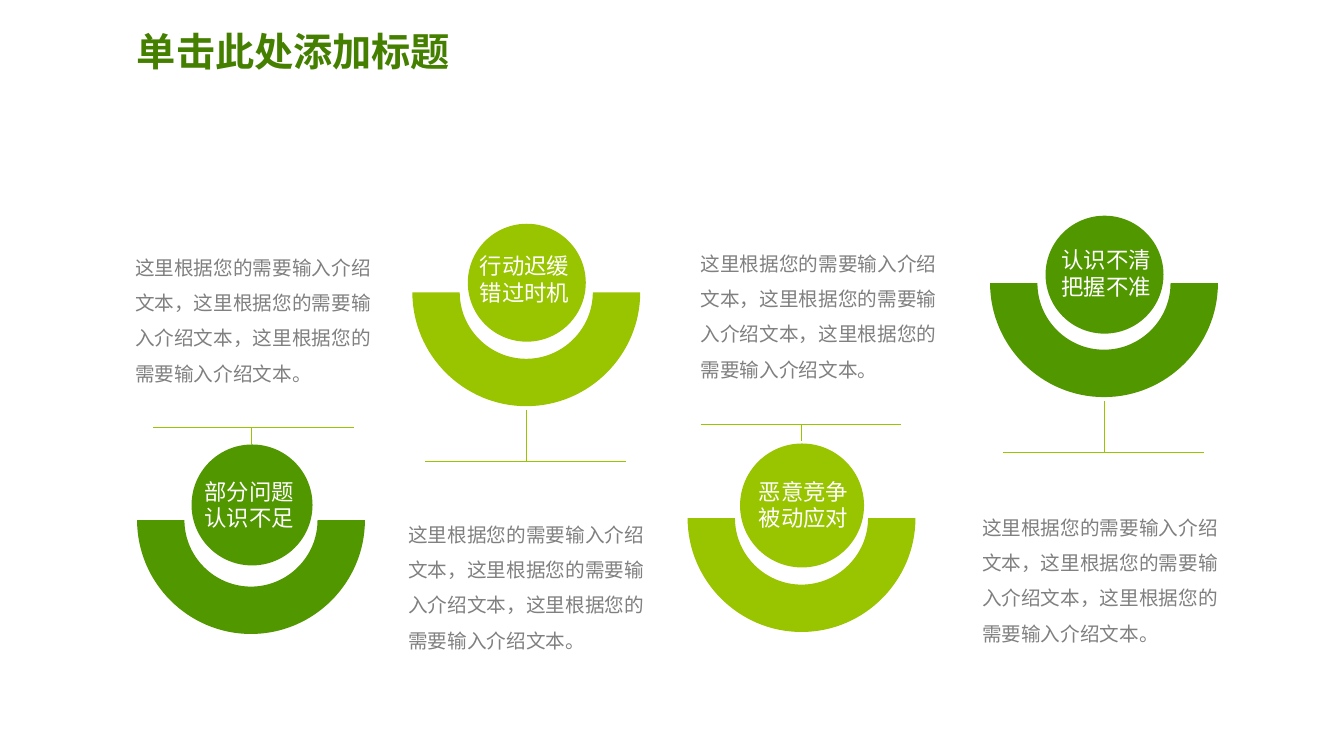
from dataclasses import dataclass

import lxml.etree
import pptx
import pptx.dml.color
import pptx.enum.shapes
import pptx.enum.text
import pptx.oxml.ns
import pptx.util
from pptx.util import Inches

COLORS = {
    "background": "FFFFFF",
    "dark": "519700",
    "light": "99C400",
    "title": "447F00",
    "body": "808080",
    "label": "FFFFFF",
}
BODY = "这里根据您的需要输入介绍文本，" * 2 + "这里根据您的需要输入介绍文本。"
SLIDE_WIDTH, SLIDE_HEIGHT = 13.33, 7.5
OUTER_RADIUS = 1.13
INNER_RADIUS = 0.66
ARC_HANDLE = 0.55  # curve handle of a quarter circle, as a share of its radius
BAR_WIDTH = 1.99


@dataclass
class Topic:
    lines: tuple
    color: str
    center: float
    ring_top: float
    circle: tuple  # left, top, diameter
    bar: tuple  # left, top
    stem_end: float
    label: tuple  # left, top
    body: tuple  # left, top
    centered: bool = False


TOPICS = [
    Topic(("部分问题", "认识不足"), "dark", 2.49, 5.16, (1.9, 4.41, 1.2),
          (1.52, 4.24), 4.4, (1.93, 4.69), (1.21, 2.35)),
    Topic(("行动迟缓", "错过时机"), "light", 5.22, 2.9, (4.64, 2.22, 1.17),
          (4.22, 4.58), 4.07, (4.66, 2.45), (3.92, 5)),
    Topic(("恶意竞争", "被动应对"), "light", 7.95, 5.14, (7.34, 4.4, 1.23),
          (6.95, 4.21), 4.38, (7.42, 4.69), (6.82, 2.31), centered=True),
    Topic(("认识不清", "把握不准"), "dark", 10.95, 2.81, (10.37, 2.14, 1.17),
          (9.95, 4.49), 3.98, (10.43, 2.39), (9.61, 4.93)),
]


def rgb(name):
    return pptx.dml.color.RGBColor.from_string(COLORS[name])


def paint(shape, color):
    shape.shadow.inherit = False
    shape.fill.solid()
    shape.fill.fore_color.rgb = rgb(color)
    shape.line.fill.background()


def add_preset(shapes, preset, place, color):
    paint(shapes.add_shape(preset, *map(Inches, place)), color)


def half_circle(radius):
    """Give curve points from the left end through the bottom to the right."""
    handle = radius * ARC_HANDLE
    return [(-radius, 0), (-radius, handle), (-handle, radius), (0, radius),
            (handle, radius), (radius, handle), (radius, 0)]


def bend(outline, first):
    """Turn three line segments of the outline, from first on, into a curve."""
    segments = list(outline)[first:first + 3]
    curve = lxml.etree.Element(pptx.oxml.ns.qn("a:cubicBezTo"))
    segments[0].addprevious(curve)
    for segment in segments:
        curve.append(segment[0])
        outline.remove(segment)


def add_half_ring(shapes, center, top, color):
    """Draw the lower half of a ring whose flat edge lies at top."""
    offsets = ([(-OUTER_RADIUS, 0)] + half_circle(INNER_RADIUS)
               + half_circle(OUTER_RADIUS)[::-1])
    points = [(Inches(center + x), Inches(top + y)) for x, y in offsets]
    builder = shapes.build_freeform(*points[0])
    builder.add_line_segments(points[1:], close=True)
    ring = builder.convert_to_shape()
    outline = next(ring._element.iter(pptx.oxml.ns.qn("a:path")))
    for first in (12, 9, 5, 2):
        bend(outline, first)
    paint(ring, color)


def add_line(shapes, start, end):
    line = shapes.add_connector(
        pptx.enum.shapes.MSO_CONNECTOR.STRAIGHT,
        *map(Inches, start + end))
    line.line.color.rgb = rgb("light")
    line.line.width = pptx.util.Pt(0.5)
    lxml.etree.SubElement(line._element.spPr,
                          pptx.oxml.ns.qn("a:effectLst"))


def add_text(shapes, place, lines, size, color, font="Arial", bold=None,
             spacing=None, align=None, wrap=True):
    frame = shapes.add_textbox(*map(Inches, place)).text_frame
    frame.word_wrap = wrap
    frame.text = "\n".join(lines)
    for para in frame.paragraphs:
        para.font.name = font
        para.font.size = pptx.util.Pt(size)
        para.font.bold = bold
        para.font.color.rgb = rgb(color)
        para.line_spacing = spacing
        para.alignment = align
    return frame


def add_title(shapes, text):
    frame = add_text(shapes, (1.26, 0.11, 11.5, 0.85), [text], 28, "title",
                     font="Montserrat", bold=True, spacing=0.9)
    frame.vertical_anchor = pptx.enum.text.MSO_ANCHOR.MIDDLE


def add_body(shapes, left, top):
    frame = add_text(shapes, (left, top, 2.68, 1.55), [BODY], 14, "body",
                     spacing=1.5)
    frame.margin_left = frame.margin_right = Inches(0.13)
    frame.margin_top = frame.margin_bottom = Inches(0.07)
    frame.auto_size = pptx.enum.text.MSO_AUTO_SIZE.SHAPE_TO_FIT_TEXT


def add_label(shapes, topic):
    align = pptx.enum.text.PP_ALIGN.CENTER if topic.centered else None
    frame = add_text(shapes, topic.label + (1.1, 0.64), topic.lines, 16,
                     "label", align=align, wrap=False)
    frame.auto_size = pptx.enum.text.MSO_AUTO_SIZE.SHAPE_TO_FIT_TEXT


def add_topic(page, topic):
    shapes = page.shapes.add_group_shape().shapes
    add_half_ring(shapes, topic.center, topic.ring_top, topic.color)
    left, top, diameter = topic.circle
    add_preset(shapes, pptx.enum.shapes.MSO_SHAPE.OVAL,
               (left, top, diameter, diameter), topic.color)
    left, top = topic.bar
    add_line(shapes, (left, top), (left + BAR_WIDTH, top))
    add_line(shapes, (topic.center, top), (topic.center, topic.stem_end))
    add_label(shapes, topic)


def main():
    deck = pptx.Presentation()
    deck.slide_width = Inches(SLIDE_WIDTH)
    deck.slide_height = Inches(SLIDE_HEIGHT)
    page = deck.slides.add_slide(deck.slide_layouts[6])
    add_preset(page.shapes, pptx.enum.shapes.MSO_SHAPE.RECTANGLE,
               (0, 0, SLIDE_WIDTH, SLIDE_HEIGHT), "background")
    for topic in TOPICS:
        add_topic(page, topic)
    for topic in TOPICS:
        add_body(page.shapes, *topic.body)
    add_title(page.shapes, "单击此处添加标题")
    deck.save("out.pptx")


if __name__ == "__main__":
    main()
